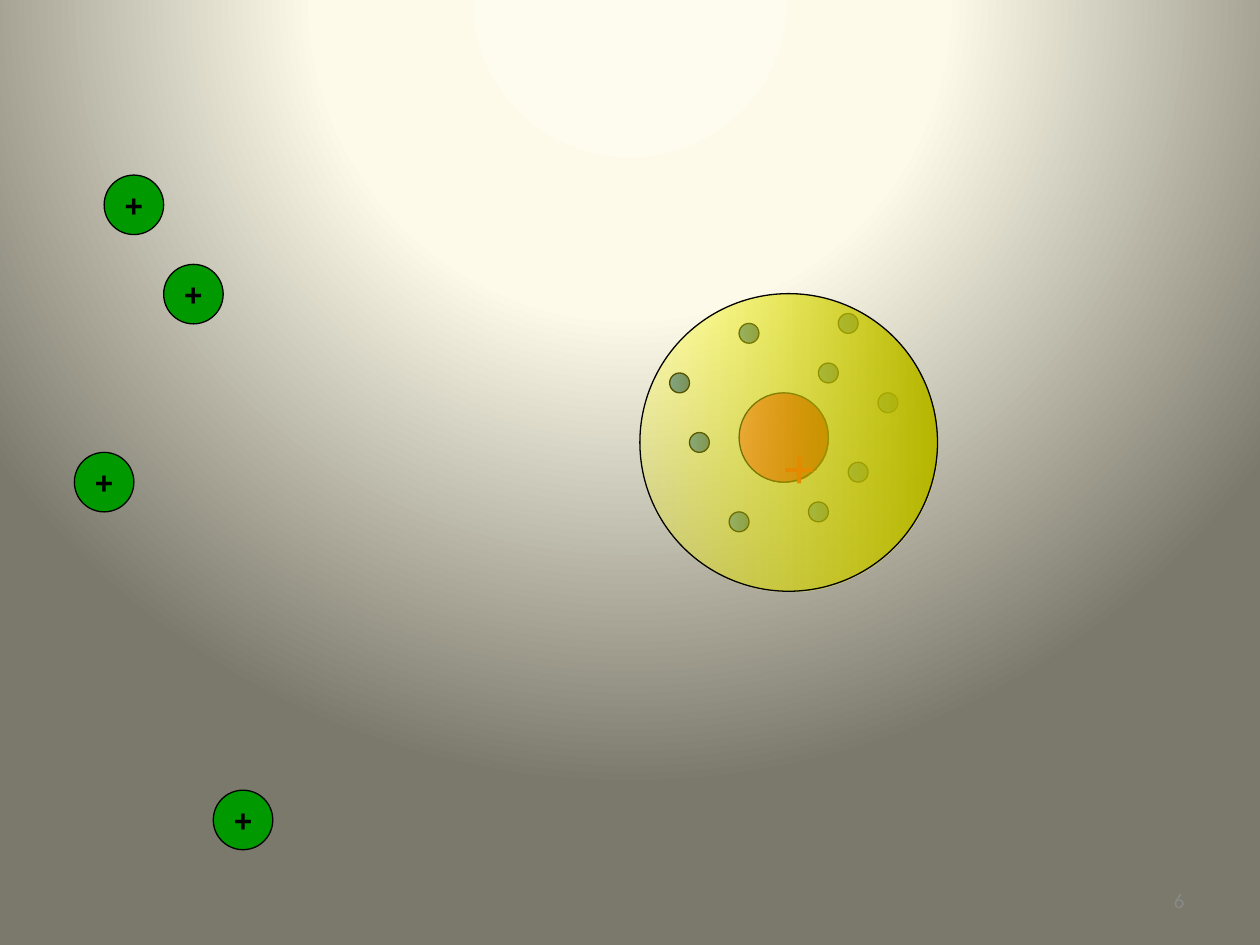
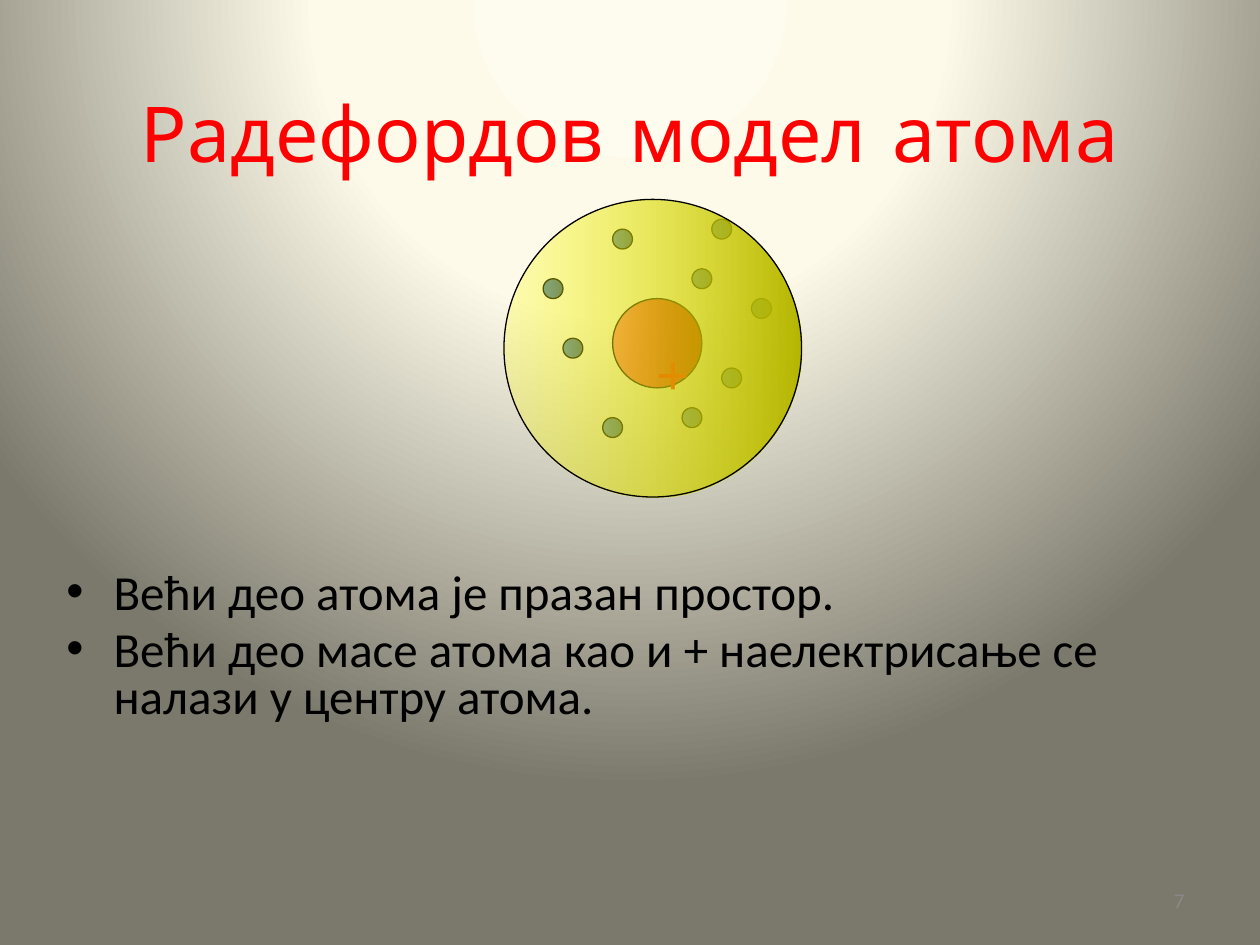
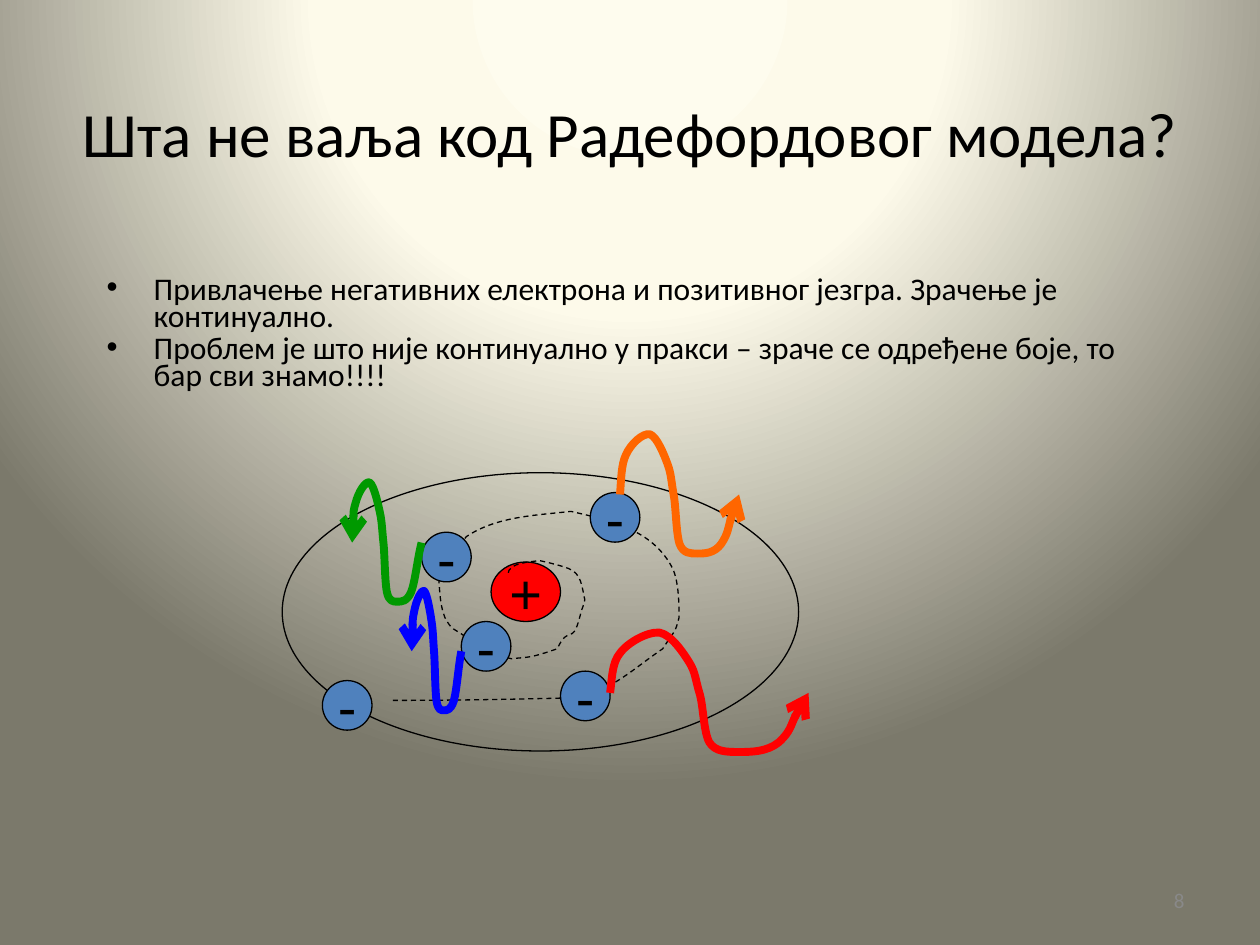
"""Build three slides on the Rutherford model of the atom."""
from dataclasses import dataclass

from lxml import etree
from pptx import Presentation
from pptx import util as u
from pptx.dml.color import RGBColor
from pptx.enum import dml, shapes, text
from pptx.oxml import parse_xml
from pptx.oxml.ns import nsdecls, qn

Cm, Pt = u.Cm, u.Pt


@dataclass(frozen=True)
class Theme:
    ink: str = "000000"
    red: str = "FF0000"
    yellow: str = "FFFF00"
    green: str = "009900"
    blue: str = "0000FF"
    orange: str = "FF6600"
    electron: str = "4F81BD"
    number: str = "898989"
    backdrop: tuple = ((0, "FEFCEE"), (40, "FDFAEA"), (100, "7B796B"))
    shade: int = 46275
    body_font: str = "Calibri"
    title_font: str = "Comic Neue"
    sign_font: str = "Arial"
    nucleus_font: str = "Montserrat"
    thin: float = 0.75
    thick: float = 4.5
    title_size: int = 44
    long_title_size: int = 36
    body_size: int = 28
    small_body_size: int = 18
    ion_size: int = 18
    charge_size: int = 32
    nucleus_size: int = 36
    number_size: int = 12


ELECTRON_OFFSETS = [(-1.4, -0.4), (1.6, -0.6), (2.2, 1.4), (-0.2, 2.4), (1.4, 2.2),
                    (0, -1.4), (-1, 0.8), (2.8, 0), (2, -1.6)]
IONS = [(3.3, 5.33), (4.3, 15.93), (2.1, 3.53), (1.5, 9.12)]
WAVE = [(0, 0.51), (0.01, 0.38), (0.01, 0.26), (0.05, 0.18),
        (0.09, 0.09), (0.19, 0), (0.25, 0.01), (0.31, 0.03), (0.37, 0.18), (0.4, 0.26),
        (0.43, 0.34), (0.43, 0.4), (0.45, 0.51), (0.47, 0.61), (0.47, 0.83), (0.5, 0.92),
        (0.53, 1), (0.59, 1), (0.65, 1), (0.71, 1), (0.79, 1), (0.85, 0.92),
        (0.91, 0.83), (0.94, 0.64), (1, 0.51)]
SPIRAL = [(7.92, 14.12), (9.09, 14.12), (10.26, 14.1), (11.46, 14.07),
          (12.24, 14.02), (12.75, 13.49), (13.36, 13.08),
          (13.67, 12.6), (13.59, 12.8), (13.69, 12.45),
          (13.69, 12.24), (13.69, 11.73), (13.56, 11.46),
          (13.16, 10.67), (12.29, 10.49), (11.51, 10.31),
          (10.8, 10.39), (10.01, 10.41), (9.4, 10.82),
          (9.17, 11.15), (8.97, 11.15), (8.84, 11.58),
          (8.86, 11.79), (8.86, 12.19), (8.97, 12.45),
          (9.12, 12.73), (9.14, 12.65), (9.4, 12.85),
          (9.47, 12.93), (9.53, 13.03), (9.6, 13.08),
          (9.78, 13.21), (10.06, 13.21), (10.31, 13.28),
          (10.49, 13.26), (10.64, 13.26), (10.82, 13.21),
          (10.95, 13.18), (11.23, 13.08), (11.23, 13.08),
          (11.28, 13), (11.3, 12.93), (11.38, 12.85),
          (11.43, 12.8), (11.53, 12.8), (11.58, 12.73),
          (11.66, 12.6), (11.68, 12.45), (11.73, 12.29),
          (11.76, 12.22), (11.79, 12.09), (11.79, 12.09),
          (11.73, 11.84), (11.73, 11.56), (11.46, 11.46),
          (11.25, 11.38), (10.87, 11.3), (10.87, 11.3),
          (10.74, 11.33), (10.24, 11.33), (10.24, 11.58)]


def apply(target, formats):
    for name, value in formats.items():
        setattr(target, name, value)


def stop(position, color, change=""):
    return (f'<a:gs pos="{position * 1000}"><a:srgbClr val="{color}">'
            f'{change}</a:srgbClr></a:gs>')


def set_gradient(parent, stops, direction):
    gradient = parse_xml(f'<a:gradFill {nsdecls("a")} rotWithShape="1">'
                         f'<a:gsLst>{"".join(stops)}</a:gsLst>{direction}</a:gradFill>')
    parent.replace(parent.find(qn("a:noFill")), gradient)


class Deck:
    def __init__(self, theme, first_number):
        self.theme = theme
        self.number = first_number
        self.slide = None
        self.presentation = Presentation()
        apply(self.presentation, {"slide_width": Cm(25.4), "slide_height": Cm(19.05)})
        master = self.presentation.slide_master
        master.background.fill.background()
        set_gradient(master.element.xpath("./p:cSld/p:bg/p:bgPr")[0],
                     [stop(*entry) for entry in theme.backdrop],
                     '<a:path path="circle"><a:fillToRect l="50000" t="-80000" '
                     'r="50000" b="180000"/></a:path>')

    def add_slide(self, title=None, font=None, size=None, color=None):
        layout = self.presentation.slide_layouts[5 if title else 6]
        self.slide = self.presentation.slides.add_slide(layout)
        if title:
            shape = self.slide.shapes.title
            apply(shape, {"left": Cm(1.27), "top": Cm(1.07),
                          "width": Cm(22.86), "height": Cm(3.18)})
            shape.text_frame.vertical_anchor = text.MSO_ANCHOR.MIDDLE
            self.add_words(shape.text_frame.paragraphs[0], title, font, size, color)
        self.add_number()

    def add_words(self, paragraph, words, font, size, color, bold=False,
                  alignment=text.PP_ALIGN.CENTER):
        paragraph.alignment = alignment
        run = paragraph.add_run()
        run.text = words
        apply(run.font, {"name": font, "size": Pt(size), "bold": bold})
        run.font.color.rgb = RGBColor.from_string(color)
        return run

    def add_box(self, left, top, width, height, wrap=True):
        box = self.slide.shapes.add_textbox(Cm(left), Cm(top), Cm(width), Cm(height))
        box.text_frame.word_wrap = wrap
        return box.text_frame

    def add_number(self):
        frame = self.add_box(18.2, 17.65, 5.93, 1.01)
        frame.vertical_anchor = text.MSO_ANCHOR.MIDDLE
        self.add_words(frame.paragraphs[0], str(self.number), self.theme.body_font,
                       self.theme.number_size, self.theme.number,
                       alignment=text.PP_ALIGN.RIGHT)
        self.number += 1

    def add_bullets(self, box, lines, size, spacing):
        frame = self.add_box(*box)
        for index, line in enumerate(lines):
            paragraph = frame.add_paragraph() if index else frame.paragraphs[0]
            self.add_words(paragraph, line, self.theme.body_font, size, self.theme.ink,
                           alignment=text.PP_ALIGN.LEFT)
            apply(paragraph, {"line_spacing": spacing, "space_before": Pt(size * 0.2)})
            properties = paragraph._p.get_or_add_pPr()
            properties.set("marL", str(Cm(0.95)))
            properties.set("indent", str(-Cm(0.95)))
            etree.SubElement(properties, qn("a:buFont"), typeface="Arial")
            etree.SubElement(properties, qn("a:buChar"), char="•")

    def set_line(self, shape, color, width):
        shape.line.color.rgb = RGBColor.from_string(color)
        shape.line.width = Pt(width)
        shape.shadow.inherit = False

    def add_ellipse(self, left, top, width, height, fill=None):
        shape = self.slide.shapes.add_shape(shapes.MSO_SHAPE.OVAL, Cm(left), Cm(top),
                                            Cm(width), Cm(height))
        if fill:
            shape.fill.solid()
            shape.fill.fore_color.rgb = RGBColor.from_string(fill)
        else:
            shape.fill.background()
        self.set_line(shape, self.theme.ink, self.theme.thin)
        return shape

    def add_ball(self, left, top, diameter, color, opacity=100):
        shape = self.add_ellipse(left, top, diameter, diameter)
        alpha = f'<a:alpha val="{opacity * 1000}"/>' if opacity < 100 else ""
        shade = f'<a:shade val="{self.theme.shade}"/>'
        set_gradient(shape.element.spPr,
                     [stop(0, color, alpha), stop(100, color, shade)],
                     '<a:lin ang="0" scaled="1"/>')

    def add_charge(self, box, fill, sign, size, bold=False):
        frame = self.add_ellipse(*box, fill).text_frame
        apply(frame, {"word_wrap": False, "vertical_anchor": text.MSO_ANCHOR.MIDDLE})
        self.add_words(frame.paragraphs[0], sign, self.theme.sign_font, size,
                       self.theme.ink, bold)

    def add_atom(self, left, top, shell_left):
        theme = self.theme
        self.add_ball(left, top, 1.8, theme.red, 48)
        frame = self.add_box(left + 0.6, top + 0.62, 0.6, 0.7, wrap=False)
        run = self.add_words(frame.paragraphs[0], "+", theme.nucleus_font,
                             theme.nucleus_size, theme.red)
        run.font._element.insert(0, parse_xml(
            f'<a:ln {nsdecls("a")} w="{Pt(theme.thin)}"><a:solidFill>'
            f'<a:srgbClr val="{theme.ink}"/></a:solidFill></a:ln>'))
        for right, down in ELECTRON_OFFSETS:
            self.add_ball(left + right, top + down, 0.4, theme.electron)
        self.add_ball(shell_left, top - 2, 6, theme.yellow, 23)

    def add_curve(self, points, color, width):
        start, *others = [(Cm(x), Cm(y)) for x, y in points]
        builder = self.slide.shapes.build_freeform(*start)
        builder.add_line_segments(others, close=False)
        shape = builder.convert_to_shape()
        outline = shape.element.xpath(".//a:path")[0]
        segments = outline.findall(qn("a:lnTo"))
        for index in range(0, len(segments), 3):
            curve = etree.SubElement(outline, qn("a:cubicBezTo"))
            for segment in segments[index:index + 3]:
                curve.append(segment[0])
                outline.remove(segment)
        shape.fill.background()
        self.set_line(shape, color, width)
        return shape

    def add_wave(self, left, top, width, color, arrow_end):
        points = [(left + x * width, top + y * 2.43) for x, y in WAVE]
        shape = self.add_curve(points, color, self.theme.thick)
        etree.SubElement(shape.element.spPr.find(qn("a:ln")), qn(f"a:{arrow_end}"),
                         type="arrow")


def main():
    theme = Theme()
    deck = Deck(theme, first_number=6)

    deck.add_slide()
    deck.add_atom(14.9, 7.92, shell_left=12.9)
    for left, top in IONS:
        deck.add_charge((left, top, 1.2, 1.2), theme.green, "+", theme.ion_size, True)

    deck.add_slide("Радефордов модел атома", theme.title_font, theme.title_size, theme.red)
    deck.add_bullets((1.09, 11.43, 23.04, 3.35),
                     ["Већи део атома је празан простор.",
                      "Већи део масе атома као и + наелектрисање се налази у центру атома."],
                     theme.body_size, 0.8)
    deck.add_atom(12.35, 6.02, shell_left=10.16)

    deck.add_slide("Шта не ваља код Радефордовог модела?", theme.body_font,
                   theme.long_title_size, theme.ink)
    deck.add_bullets((1.9, 5.51, 21.6, 2.7),
                     ["Привлачење негативних електрона и позитивног језгра. "
                      "Зрачење је континуално.",
                      "Проблем је што није континуално у пракси – зраче се одређене боје, "
                      "то бар сви знамо!!!!"],
                     theme.small_body_size, 0.7)
    deck.add_ellipse(5.69, 9.53, 10.41, 5.61)
    deck.add_charge((9.9, 11.33, 1.4, 1.2), theme.red, "+", theme.charge_size)
    spiral = deck.add_curve(SPIRAL, theme.ink, theme.thin)
    spiral.line.dash_style = dml.MSO_LINE.DASH
    emissions = [((6.5, 13.72), None),
                 ((11.3, 13.53), (12.3, 12.73, 4, theme.red, "tailEnd")),
                 ((11.9, 9.93), (12.5, 8.73, 2.4, theme.orange, "tailEnd")),
                 ((8.5, 10.73), (7.1, 9.7, 1.4, theme.green, "headEnd")),
                 ((9.3, 12.53), (8.3, 11.89, 1, theme.blue, "headEnd"))]
    for electron, wave in emissions:
        deck.add_charge((*electron, 1, 1), theme.electron, "-", theme.charge_size)
        if wave:
            deck.add_wave(*wave)

    deck.presentation.save("out.pptx")


if __name__ == "__main__":
    main()
